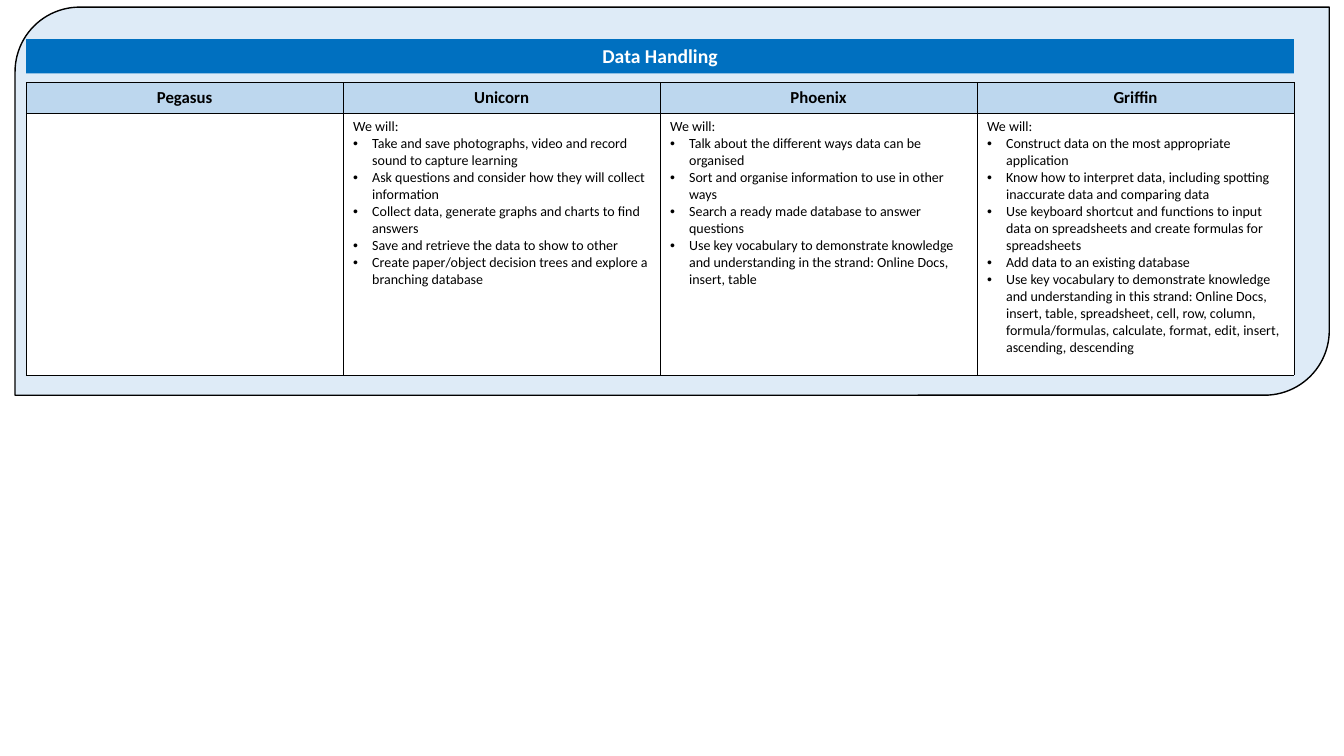
from dataclasses import dataclass

from lxml.etree import SubElement
from pptx import Presentation
from pptx.dml.color import RGBColor
from pptx.enum.shapes import MSO_SHAPE
from pptx.enum.text import MSO_ANCHOR, MSO_AUTO_SIZE, PP_ALIGN
from pptx.oxml.ns import qn
from pptx.util import Cm, Pt


@dataclass(frozen=True)
class Theme:
    """Colours, font and type sizes of the slide."""

    font: str = "Calibri"
    ink: str = "000000"
    paper: str = "FFFFFF"
    panel: str = "DEEBF7"
    bar: str = "0070C0"
    head: str = "BDD7EE"
    title: int = 14
    label: int = 12
    body: int = 10


THEME = Theme()
INTRO = "We will:"
GROUPS = {
    "Pegasus": [],
    "Unicorn": [
        "Take and save photographs, video and record sound to capture learning",
        "Ask questions and consider how they will collect information",
        "Collect data, generate graphs and charts to find answers",
        "Save and retrieve the data to show to other",
        "Create paper/object decision trees and explore a branching database",
    ],
    "Phoenix": [
        "Talk about the different ways data can be organised",
        "Sort and organise information to use in other ways",
        "Search a ready made database to answer questions",
        "Use key vocabulary to demonstrate knowledge and understanding in the "
        "strand: Online Docs, insert, table",
    ],
    "Griffin": [
        "Construct data on the most appropriate application",
        "Know how to interpret data, including spotting inaccurate data and "
        "comparing data",
        "Use keyboard shortcut and functions to input data on spreadsheets and "
        "create formulas for spreadsheets",
        "Add data to an existing database",
        "Use key vocabulary to demonstrate knowledge and understanding in this "
        "strand: Online Docs, insert, table, spreadsheet, cell, row, column, "
        "formula/formulas, calculate, format, edit, insert, ascending, descending",
    ],
}


def paint(fill, tone):
    """Give a fill one solid colour."""
    fill.solid()
    fill.fore_color.rgb = RGBColor.from_string(tone)


def style(frame, size, tone, bold=False, align=PP_ALIGN.LEFT):
    """Format all the text in a frame."""
    for para in frame.paragraphs:
        para.alignment = align
        for run in para.runs:
            run.font.name = THEME.font
            run.font.size = Pt(size)
            run.font.bold = bold
            run.font.color.rgb = RGBColor.from_string(tone)


def add_box(slide, kind, left, top, width, height, tone):
    """Add a flat filled shape without a line."""
    box = slide.shapes.add_shape(kind, Cm(left), Cm(top), Cm(width), Cm(height))
    box.shadow.inherit = False
    paint(box.fill, tone)
    box.line.fill.background()
    return box


def add_panel(slide):
    """Add the outlined panel behind the content."""
    panel = add_box(slide, MSO_SHAPE.ROUND_2_DIAG_RECTANGLE,
                    0.38, 0.18, 33.12, 9.78, THEME.panel)
    paint(panel.line.fill, THEME.ink)
    panel.line.width = Pt(1)


def add_title(slide, text):
    """Add the title bar."""
    bar = add_box(slide, MSO_SHAPE.RECTANGLE, 0.66, 0.99, 31.95, 0.86, THEME.bar)
    frame = bar.text_frame
    frame.text = text
    frame.word_wrap = True
    frame.auto_size = MSO_AUTO_SIZE.SHAPE_TO_FIT_TEXT
    frame.vertical_anchor = MSO_ANCHOR.TOP
    style(frame, THEME.title, THEME.paper, True, PP_ALIGN.CENTER)


def add_edges(cell):
    """Draw a thin line on each side of a cell."""
    props = cell._tc.get_or_add_tcPr()
    for side in ("a:lnL", "a:lnR", "a:lnT", "a:lnB"):
        edge = SubElement(props, qn(side), w=str(Pt(0.5)))
        solid = SubElement(edge, qn("a:solidFill"))
        SubElement(solid, qn("a:srgbClr"), val=THEME.ink)


def add_bullet(para):
    """Turn a paragraph into a bullet with a hanging indent."""
    props = para._p.get_or_add_pPr()
    props.set("marL", str(Cm(0.48)))
    props.set("indent", str(-Cm(0.48)))
    SubElement(props, qn("a:buFont"), typeface="Arial")
    SubElement(props, qn("a:buChar"), char="•")


def fill_cell(cell, lines, tone, size, bold=False, align=PP_ALIGN.LEFT):
    """Fill a cell with lines, with a bullet on all but the first."""
    add_edges(cell)
    paint(cell.fill, tone)
    frame = cell.text_frame
    frame.text = "\n".join(lines)
    style(frame, size, THEME.ink, bold, align)
    for para in frame.paragraphs[1:]:
        add_bullet(para)


def add_grid(slide, groups):
    """Add the table with one column for each group."""
    rows = (0.77, 6.6)
    grid = slide.shapes.add_table(len(rows), len(groups), Cm(0.66), Cm(2.08),
                                  Cm(31.95), Cm(sum(rows))).table
    grid.first_row = False
    grid.horz_banding = False
    for row, height in zip(grid.rows, rows):
        row.height = Cm(height)
    for col, (name, goals) in enumerate(groups.items()):
        fill_cell(grid.cell(0, col), [name], THEME.head, THEME.label, True,
                  PP_ALIGN.CENTER)
        lines = [INTRO, *goals] if goals else []
        fill_cell(grid.cell(1, col), lines, THEME.paper, THEME.body)


def main():
    """Build and save the slide."""
    deck = Presentation()
    deck.slide_width, deck.slide_height = Cm(33.87), Cm(19.05)
    slide = deck.slides.add_slide(deck.slide_layouts[6])
    add_panel(slide)
    add_title(slide, "Data Handling")
    add_grid(slide, GROUPS)
    deck.save("out.pptx")


if __name__ == "__main__":
    main()
